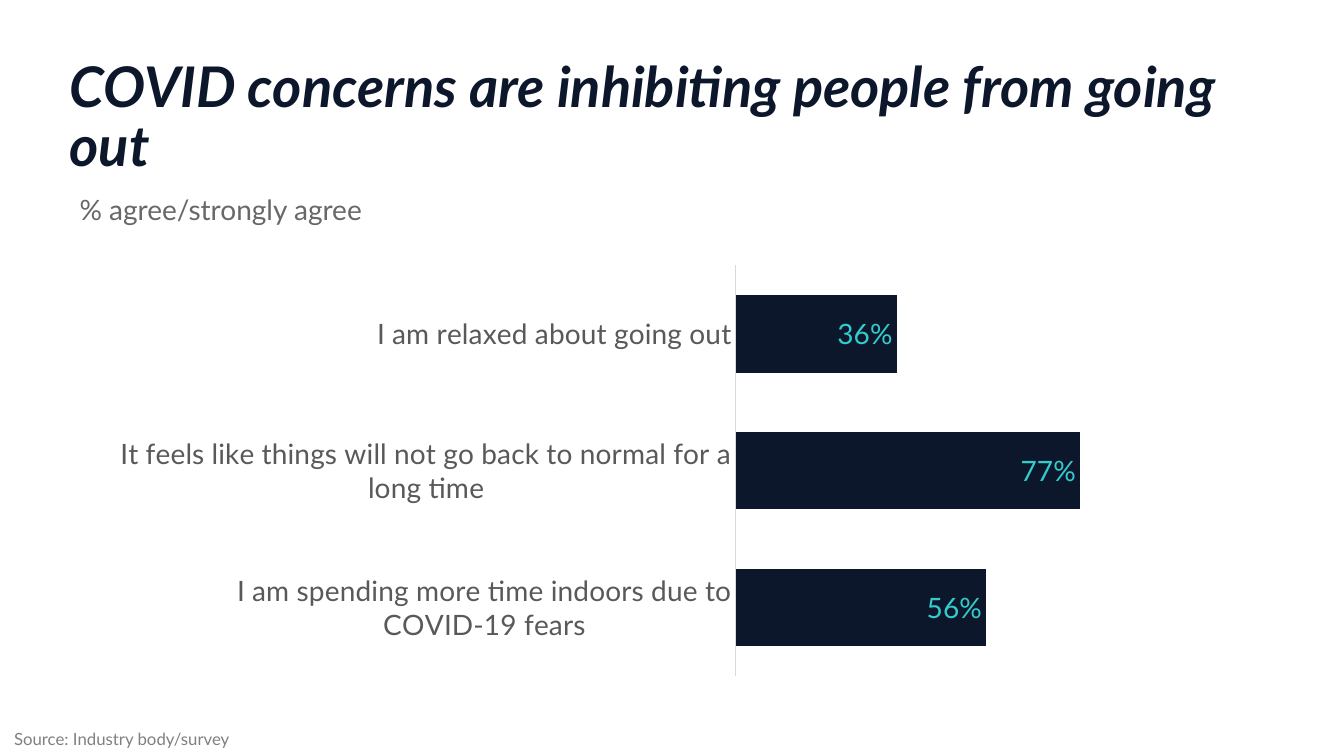
from lxml.etree import SubElement
from pptx import Presentation
from pptx.chart.data import CategoryChartData
from pptx.dml.color import RGBColor
from pptx.enum.chart import XL_CHART_TYPE, XL_LABEL_POSITION, XL_TICK_MARK
from pptx.enum.text import MSO_ANCHOR, MSO_AUTO_SIZE, PP_ALIGN
from pptx.oxml.ns import qn
from pptx.util import Inches, Pt

COLOURS = {"navy": "0D172C", "teal": "33CCCC", "label": "595959",
           "subtitle": "686869", "source": "808080", "axis": "D9D9D9"}
FONT = "Lato"
AGREEMENT = {
    "I am spending more time indoors due to COVID-19 fears": 0.56,
    "It feels like things will not go back to normal for a long time": 0.77,
    "I am relaxed about going out": 0.36,
}
PLOT_SHARES = {"x": 0.6, "y": 0.02, "w": 0.38, "h": 0.96}


def colour(name):
    """Return a named colour of the slide."""
    return RGBColor.from_string(COLOURS[name])


def style_font(font, size, colour_name):
    """Apply the slide's typeface with a size and colour."""
    font.name = FONT
    font.size = Pt(size)
    font.color.rgb = colour(colour_name)


def place(shape, box):
    """Move a shape to a box given in inches."""
    shape.left, shape.top, shape.width, shape.height = map(Inches, box)


def add_title(slide, box, text):
    """Fill the title placeholder with the headline."""
    title = slide.shapes.title
    place(title, box)
    frame = title.text_frame
    frame.text = text
    frame.word_wrap = True
    frame.auto_size = MSO_AUTO_SIZE.NONE
    frame.vertical_anchor = MSO_ANCHOR.TOP
    frame.margin_left = frame.margin_right = frame.margin_top = frame.margin_bottom = 0
    paragraph = frame.paragraphs[0]
    paragraph.alignment = PP_ALIGN.LEFT
    paragraph.line_spacing = Pt(42.7)
    font = paragraph.runs[0].font
    style_font(font, 40, "navy")
    font.bold = font.italic = True


def add_caption(slide, box, text, size, colour_name, margins=(0.1, 0.05)):
    """Add one line of plain text in a box."""
    frame = slide.shapes.add_textbox(*map(Inches, box)).text_frame
    frame.text = text
    frame.word_wrap = True
    frame.margin_left = frame.margin_right = Inches(margins[0])
    frame.margin_top = frame.margin_bottom = Inches(margins[1])
    style_font(frame.paragraphs[0].runs[0].font, size, colour_name)


def set_plot_layout(chart, shares):
    """Fix the inner plot area as shares of the chart."""
    plot_area = chart._chartSpace.chart.plotArea
    layout = plot_area.find(qn("c:layout"))
    if layout is None:
        layout = SubElement(plot_area, qn("c:layout"))
        plot_area.insert(0, layout)
    manual = SubElement(layout, qn("c:manualLayout"))
    settings = {"layoutTarget": "inner", "xMode": "edge", "yMode": "edge", **shares}
    for tag, value in settings.items():
        SubElement(manual, qn(f"c:{tag}")).set("val", str(value))


def add_agreement_chart(slide, box):
    """Add the bar chart of agreement with each statement."""
    data = CategoryChartData(number_format="0%")
    data.categories = list(AGREEMENT)
    data.add_series("Series 1", list(AGREEMENT.values()))
    chart = slide.shapes.add_chart(
        XL_CHART_TYPE.BAR_CLUSTERED, *map(Inches, box), data).chart
    chart.has_legend = chart.has_title = False
    style_font(chart.font, 20, "label")
    set_plot_layout(chart, PLOT_SHARES)

    category_axis = chart.category_axis
    category_axis.major_tick_mark = XL_TICK_MARK.NONE
    category_axis.format.line.color.rgb = colour("axis")
    category_axis.format.line.width = Pt(0.75)
    style_font(category_axis.tick_labels.font, 20, "label")

    value_axis = chart.value_axis
    value_axis.minimum_scale, value_axis.maximum_scale = 0, 0.9
    value_axis.has_major_gridlines = False
    value_axis.visible = False

    plot = chart.plots[0]
    plot.gap_width = 77
    plot.vary_by_categories = False
    bars = plot.series[0].format.fill
    bars.solid()
    bars.fore_color.rgb = colour("navy")
    plot.has_data_labels = True
    labels = plot.data_labels
    labels.show_value = True
    labels.number_format = "0%"
    labels.number_format_is_linked = False
    labels.position = XL_LABEL_POSITION.INSIDE_END
    style_font(labels.font, 20, "teal")


def main():
    """Build and save the presentation."""
    presentation = Presentation()
    presentation.slide_width = Inches(13.33)
    presentation.slide_height = Inches(7.5)
    slide = presentation.slides.add_slide(presentation.slide_layouts[5])
    add_agreement_chart(slide, (1, 2.55, 10.5, 4.24))
    add_title(slide, (0.69, 0.58, 11.6, 0.7),
              "COVID concerns are inhibiting people from going out")
    add_caption(slide, (0.69, 1.86, 12.12, 0.88),
                "% agree/strongly agree", 20, "subtitle")
    add_caption(slide, (0.01, 7.16, 3.53, 0.34),
                "Source: Industry body/survey", 12, "source", (0.13, 0.07))
    presentation.save("out.pptx")


if __name__ == "__main__":
    main()
